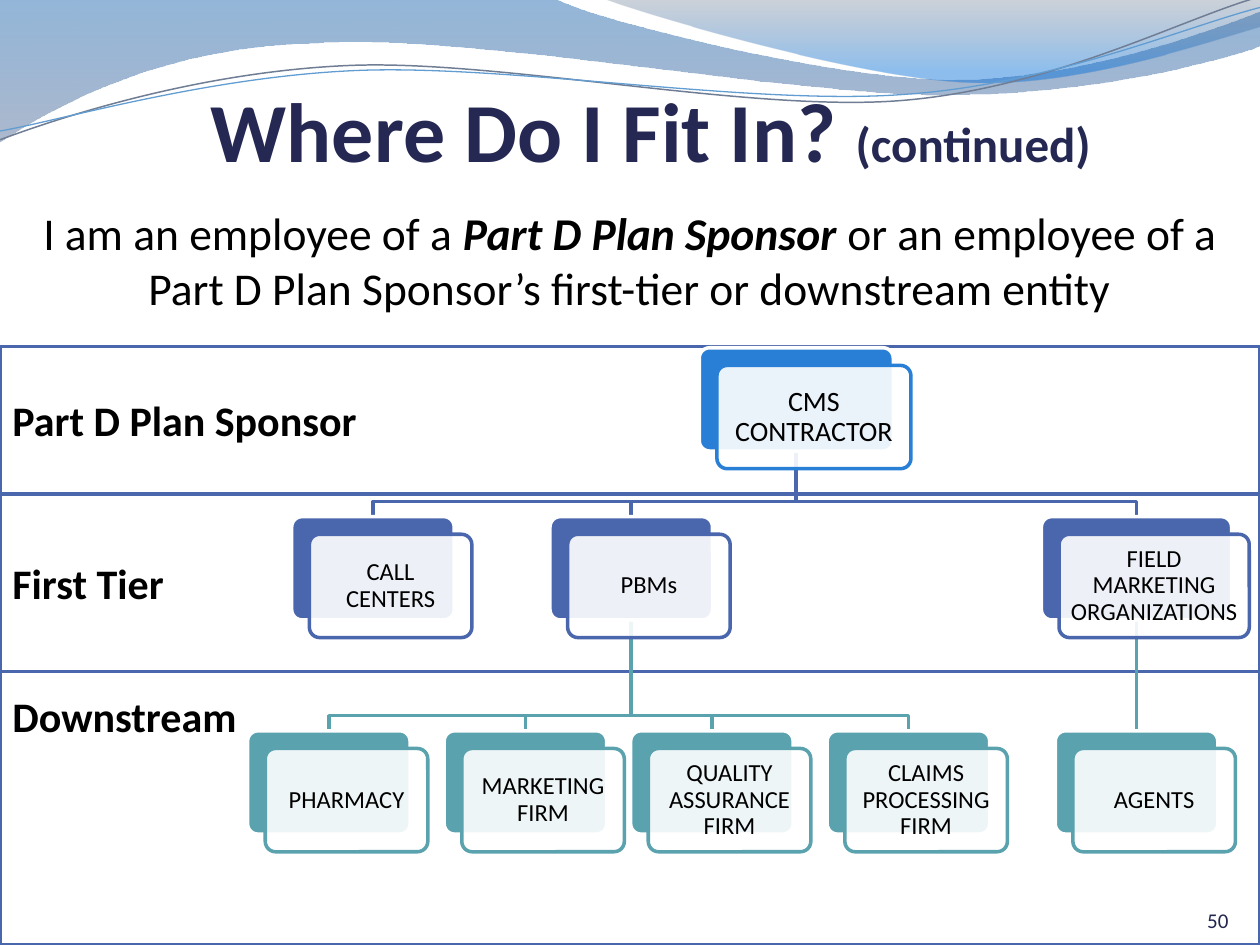
"""Build the "Where Do I Fit In?" slide with its three-tier sponsor hierarchy."""
import math
from dataclasses import dataclass
from typing import Any, NamedTuple, Optional

import pptx
import pptx.dml.color
import pptx.enum.shapes
import pptx.enum.text
import pptx.oxml.ns
import pptx.util
from lxml import etree

RGB = pptx.dml.color.RGBColor
Pt = pptx.util.Pt
qn = pptx.oxml.ns.qn
ALIGN = pptx.enum.text.PP_ALIGN
ANCHOR = pptx.enum.text.MSO_ANCHOR
SHAPE = pptx.enum.shapes.MSO_SHAPE

WHITE = RGB(0xFF, 0xFF, 0xFF)
BLACK = RGB(0x00, 0x00, 0x00)
NAVY = RGB(0x24, 0x28, 0x52)
NUMBER = RGB(0x22, 0x26, 0x4E)
BLUE = RGB(0x29, 0x7F, 0xD5)
INDIGO = RGB(0x4A, 0x66, 0xAC)
TEAL = RGB(0x5A, 0xA2, 0xAE)
DEEP_BLUE = RGB(0x12, 0x5E, 0xAA)
STEEL = RGB(0x69, 0x7F, 0xA4)
SLATE = RGB(0x59, 0x69, 0x82)
AZURE = RGB(0x06, 0x70, 0xDA)
GREY_LINE = RGB(0x70, 0x7E, 0x95)
SKY_LINE = RGB(0x62, 0x9D, 0xD1)

COLUMNS, ROWS = 10, 7.5
CELL = 914400
CARD_H = 0.82
SHIFT = 0.14
PAD = 0.02
DROP = 0.12
STEM_W = 0.1
TILT = -2.7

Point = tuple[float, float]


class Stop(NamedTuple):
    position: float
    color: RGB
    opacity: int


class Level(NamedTuple):
    top: float
    color: RGB
    size: int
    inset: float


class Band(NamedTuple):
    label: str
    top: float
    bottom: float
    anchor: Any
    inset: float


class Card(NamedTuple):
    label: str
    center: float
    level: Level
    width: float = 1.29
    parent: Optional[str] = None


@dataclass
class Run:
    text: str
    font: dict[str, Any]
    color: RGB = BLACK


@dataclass
class Wave:
    segments: str
    points: list[Point]
    stops: tuple[Stop, ...] = ()
    line: Optional[RGB] = None
    weight: float = 0


ROOT = Level(2.76, BLUE, 16, 0.07)
FIRST = Level(4.1, INDIGO, 14, 0.06)
DOWN = Level(5.8, TEAL, 14, 0.06)

BANDS = [
    Band("Part D Plan Sponsor", 2.75, 3.92, ANCHOR.MIDDLE, 0.05),
    Band("First Tier", 3.92, 5.33, ANCHOR.MIDDLE, 0.05),
    Band("Downstream", 5.33, 7.5, ANCHOR.TOP, 0.15),
]
CARDS = [
    Card("CMS CONTRACTOR", 6.32, ROOT, 1.54),
    Card("CALL CENTERS", 2.96, FIRST, parent="CMS CONTRACTOR"),
    Card("PBMs", 5.01, FIRST, parent="CMS CONTRACTOR"),
    Card("PHARMACY", 2.61, DOWN, parent="PBMs"),
    Card("MARKETING FIRM", 4.17, DOWN, parent="PBMs"),
    Card("QUALITY ASSURANCE FIRM", 5.65, DOWN, parent="PBMs"),
    Card("CLAIMS PROCESSING FIRM", 7.21, DOWN, parent="PBMs"),
    Card("FIELD MARKETING ORGANIZATIONS", 9.02, FIRST, 1.51, "CMS CONTRACTOR"),
    Card("AGENTS", 9.02, DOWN, parent="FIELD MARKETING ORGANIZATIONS"),
]
WAVES = [
    Wave("LCCLCCCL", [(0, 0), (4.4, -0.01), (4.76, 0.17), (6.64, 0.63), (7.58, 0.63), (8.53, 0.63), (9.58, 0.26),
                      (10, 0.09), (10.01, 0.36), (9.83, 0.44), (8.7, 0.76), (7.46, 0.75), (6.22, 0.75),
                      (3.82, 0.28), (2.57, 0.34), (1.29, 0.36), (0.46, 0.83), (-0.01, 1.13), (0, 0)],
         (Stop(0, DEEP_BLUE, 45), Stop(1, STEEL, 55))),
    Wave("CCLL", [(4.79, -0.01), (5.09, 0.11), (6.82, 0.62), (7.69, 0.65), (8.56, 0.69), (9.61, 0.32),
                  (10, 0.21), (10, 0), (4.79, -0.01)], (Stop(0, SLATE, 30), Stop(0.8, AZURE, 45))),
    Wave("CCC", [(0, 1.11), (0.48, 0.93), (1.58, 0.57), (2.77, 0.52), (3.95, 0.47), (5.93, 0.89), (7.13, 0.8),
                 (8.33, 0.71), (9.38, 0.15), (9.98, -0.02)], line=GREY_LINE, weight=0.85),
    Wave("CCC", [(0, 1.04), (0.47, 0.96), (1.64, 0.61), (2.83, 0.56), (4.03, 0.51), (5.97, 0.84), (7.17, 0.75),
                 (8.36, 0.67), (9.41, 0.21), (10, 0.06)], line=SKY_LINE, weight=0.75),
]


def cells(*values: float) -> list[int]:
    """Convert grid cells to slide units."""
    return [round(v * CELL) for v in values]


def turn(x: float, y: float, degrees: float) -> Point:
    """Rotate a point about the slide's corner."""
    c, s = math.cos(math.radians(degrees)), math.sin(math.radians(degrees))
    return x * c - y * s, x * s + y * c


def set_opacity(color_el: Any, percent: int) -> None:
    """Give a colour element an opacity."""
    etree.SubElement(color_el, qn("a:alpha")).set("val", str(percent * 1000))


def style_line(s: Any, color: RGB, weight: float) -> None:
    """Colour and weight an outline."""
    s.line.color.rgb = color
    s.line.width = Pt(weight)


def add_outline(shapes: Any, points: list[Point], close: bool = False) -> Any:
    """Draw an unfilled, shadowless freeform."""
    start, *rest = [tuple(cells(*p)) for p in points]
    builder = shapes.build_freeform(*start, scale=1.0)
    builder.add_line_segments(rest, close=close)
    s = builder.convert_to_shape()
    s.shadow.inherit = False
    s.fill.background()
    return s


def bend_segments(s: Any, segments: str) -> None:
    """Join each three lines marked C into one cubic curve."""
    lines = iter(list(s.element.spPr.iter(qn("a:lnTo"))))
    for kind in segments:
        line = next(lines)
        if kind == "C":
            line.tag = qn("a:cubicBezTo")
            for extra in (next(lines), next(lines)):
                line.append(extra[0])
                extra.getparent().remove(extra)


def add_wave(shapes: Any, wave: Wave) -> None:
    """Draw one header wave, either a gradient area or a tilted thin line."""
    if wave.line is not None:
        s = add_outline(shapes, [turn(*p, -TILT) for p in wave.points])
        x, y = turn(s.left + s.width / 2, s.top + s.height / 2, TILT)
        s.left, s.top = round(x - s.width / 2), round(y - s.height / 2)
        s.rotation = TILT
        style_line(s, wave.line, wave.weight)
    else:
        s = add_outline(shapes, wave.points, True)
        s.line.fill.background()
        s.fill.gradient()
        s.fill.gradient_angle = 270
        for gs, stop in zip(s.fill.gradient_stops, wave.stops):
            gs.color.rgb, gs.position = stop.color, stop.position
        for el, stop in zip(list(s.element.spPr.iter(qn("a:srgbClr"))), wave.stops):
            set_opacity(el, stop.opacity)
    bend_segments(s, wave.segments)


def write(s: Any, runs: list[Run], frame: dict[str, Any], para: dict[str, Any]) -> None:
    """Fill a shape with one formatted paragraph."""
    tf = s.text_frame
    p = tf.paragraphs[0]
    for target, values in ((tf, {"word_wrap": True, **frame}), (p, para)):
        for name, value in values.items():
            setattr(target, name, value)
    for run in runs:
        r = p.add_run()
        r.text = run.text
        r.font.color.rgb = run.color
        for name, value in {"name": "Calibri", **run.font}.items():
            setattr(r.font, name, value)


def margins(left: float, top: float, right: float, bottom: float) -> dict[str, int]:
    """Return text frame margins in grid cells."""
    names = ("margin_left", "margin_top", "margin_right", "margin_bottom")
    return dict(zip(names, cells(left, top, right, bottom)))


def add_box(shapes: Any, kind: Any, at: tuple[float, ...], fill: RGB, line: RGB) -> Any:
    """Draw a filled, outlined shape."""
    s = shapes.add_shape(kind, *cells(*at))
    s.shadow.inherit = False
    s.fill.solid()
    s.fill.fore_color.rgb = fill
    style_line(s, line, 2)
    if kind == SHAPE.ROUNDED_RECTANGLE:
        s.adjustments[0] = 0.1
    return s


def add_branch(shapes: Any, parent: Card, child: Card) -> None:
    """Link a card to its parent with a straight or stepped line."""
    top, bottom = child.level.top, parent.level.top + CARD_H
    ends = [(parent.center, bottom), (child.center, top)]
    straight = parent.center == child.center
    steps = [] if straight else [(x, top - DROP) for x, _ in ends]
    s = add_outline(shapes, [ends[0], *steps, ends[1]])
    if straight:
        s.left, s.width = cells(child.center - STEM_W / 2, STEM_W)
        s.element.spPr.find(".//" + qn("a:path")).set("w", str(s.width))
        for pt in s.element.spPr.iter(qn("a:pt")):
            pt.set("x", str(s.width // 2))
    style_line(s, child.level.color, 2)


def add_card(shapes: Any, c: Card) -> None:
    """Draw a solid back, a translucent front and the label."""
    x, y = c.center - c.width / 2, c.level.top
    add_box(shapes, SHAPE.ROUNDED_RECTANGLE, (x, y, c.width, CARD_H), c.level.color, WHITE)
    x, y = x + SHIFT, y + SHIFT
    s = add_box(shapes, SHAPE.ROUNDED_RECTANGLE, (x, y, c.width, CARD_H), WHITE, c.level.color)
    set_opacity(s.element.spPr.find(".//" + qn("a:srgbClr")), 90)
    write(shapes.add_textbox(*cells(x + PAD, y + PAD, c.width - 2 * PAD, CARD_H - 2 * PAD)),
          [Run(c.label, {"size": Pt(c.level.size)})],
          {"vertical_anchor": ANCHOR.MIDDLE, **margins(*[c.level.inset] * 4)},
          {"alignment": ALIGN.CENTER, "line_spacing": 0.9})


def main() -> None:
    """Build and save the slide."""
    prs = pptx.Presentation()
    prs.slide_width, prs.slide_height = cells(COLUMNS, ROWS)
    shapes = prs.slides.add_slide(prs.slide_layouts[6]).shapes
    for wave in WAVES:
        add_wave(shapes, wave)
    write(shapes.add_textbox(*cells(0.83, 0.5, 8.67, 0.92)),
          [Run("Where Do I Fit In? ", {"size": Pt(48), "bold": True}, NAVY),
           Run("(continued)", {"size": Pt(28), "bold": True}, NAVY)],
          {"vertical_anchor": ANCHOR.BOTTOM, **margins(0, 0.05, 0, 0)}, {"alignment": ALIGN.CENTER})
    write(shapes.add_textbox(*cells(0, 1.58, 9.83, 0.92)),
          [Run("I am an employee of a ", {"size": Pt(26)}),
           Run("Part D Plan Sponsor ", {"size": Pt(26), "bold": True, "italic": True}),
           Run("or an employee of a Part D Plan Sponsor’s first-tier or downstream entity", {"size": Pt(26)})],
          margins(0.17, 0.05, 0, 0.05), {"alignment": ALIGN.CENTER, "space_before": Pt(5.2)})
    for b in BANDS:
        s = add_box(shapes, SHAPE.RECTANGLE, (0, b.top, COLUMNS, b.bottom - b.top), WHITE, INDIGO)
        write(s, [Run(b.label, {"size": Pt(24), "bold": True})],
              {"vertical_anchor": b.anchor, **margins(0.1, b.inset, 0.1, 0.05)}, {"alignment": ALIGN.LEFT})
    by_label = {c.label: c for c in CARDS}
    for c in reversed(CARDS):
        if c.parent:
            add_branch(shapes, by_label[c.parent], c)
    for c in CARDS:
        add_card(shapes, c)
    write(shapes.add_textbox(*cells(8.92, 7, 0.83, 0.4)), [Run("50", {"size": Pt(12)}, NUMBER)],
          {"vertical_anchor": ANCHOR.BOTTOM, **margins(0, 0, 0, 0)}, {"alignment": ALIGN.RIGHT})
    prs.save("out.pptx")


if __name__ == "__main__":
    main()
